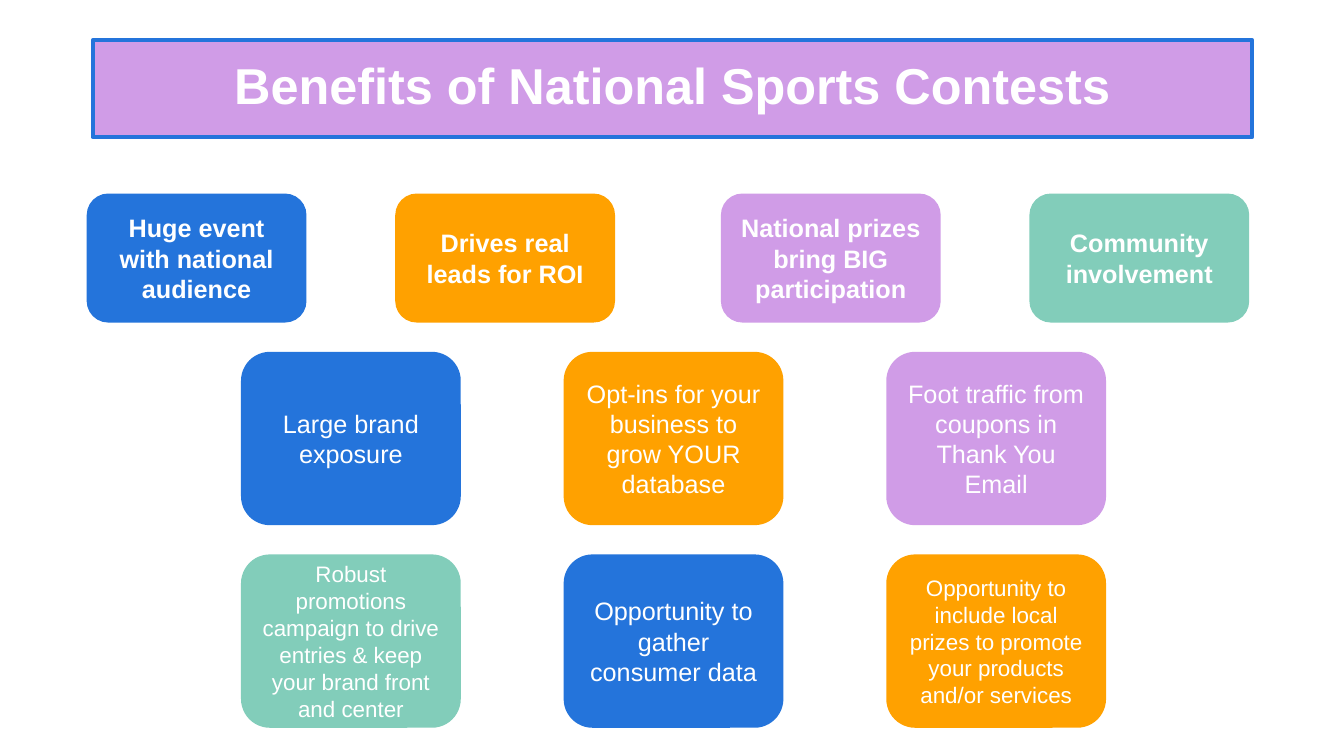
from pptx import Presentation
from pptx.dml.color import RGBColor
from pptx.enum.shapes import MSO_SHAPE as Shape
from pptx.enum.text import MSO_ANCHOR as Anchor, PP_ALIGN as Align
from pptx.util import Inches, Pt

BLUE = RGBColor(0x24, 0x74, 0xDB)
ORANGE = RGBColor(0xFF, 0xA1, 0x00)
LILAC = RGBColor(0xD0, 0x9C, 0xE7)
MINT = RGBColor(0x82, 0xCD, 0xBA)
WHITE = RGBColor(0xFF, 0xFF, 0xFF)

TITLE = "Benefits of National Sports Contests"
HEADLINES = [
    ("Huge event with national audience", BLUE),
    ("Drives real leads for ROI", ORANGE),
    ("National prizes bring BIG participation", LILAC),
    ("Community involvement", MINT),
]
DETAILS = [
    [
        ("Large brand exposure", BLUE, 18),
        ("Opt-ins for your business to grow YOUR database", ORANGE, 18),
        ("Foot traffic from coupons in Thank You Email", LILAC, 18),
    ],
    [
        ("Robust promotions campaign to drive entries & keep your brand front and center", MINT, 16),
        ("Opportunity to gather consumer data", BLUE, 18),
        ("Opportunity to include local prizes to promote your products and/or services", ORANGE, 16),
    ],
]

CARD_WIDTH = 2.18
HEADLINE_LEFT, HEADLINE_TOP, HEADLINE_HEIGHT = 0.86, 1.92, 1.28
HEADLINE_STEP, PAIR_STEP = 3.06, 6.29
DETAIL_LEFT, DETAIL_TOP, DETAIL_HEIGHT = 2.39, 3.49, 1.72
DETAIL_COLUMN, DETAIL_ROW = 3.2, 2.01


def add_card(slide, kind, box, text, color, size, bold=False):
    """Add a filled shape with centred white text."""
    card = slide.shapes.add_shape(kind, *map(Inches, box))
    card.shadow.inherit = False
    card.fill.solid()
    card.fill.fore_color.rgb = color
    card.line.fill.background()
    frame = card.text_frame
    frame.text = text
    frame.word_wrap = True
    frame.vertical_anchor = Anchor.MIDDLE
    paragraph = frame.paragraphs[0]
    paragraph.alignment = Align.CENTER
    font = paragraph.runs[0].font
    font.name, font.size, font.bold = "Arial", Pt(size), bold
    font.color.rgb = WHITE
    return card


def main():
    """Build the slide and save it."""
    deck = Presentation()
    deck.slide_width, deck.slide_height = Inches(13.33), Inches(7.5)
    slide = deck.slides.add_slide(deck.slide_layouts[6])

    banner = add_card(slide, Shape.RECTANGLE, (0.92, 0.4, 11.5, 0.96), TITLE, LILAC, 36, True)
    banner.line.color.rgb = BLUE
    banner.line.width = Pt(3)
    banner.text_frame.paragraphs[0].line_spacing = 0.9

    for index, (text, color) in enumerate(HEADLINES):
        pair, side = divmod(index, 2)
        left = HEADLINE_LEFT + pair * PAIR_STEP + side * HEADLINE_STEP
        box = (left, HEADLINE_TOP, CARD_WIDTH, HEADLINE_HEIGHT)
        add_card(slide, Shape.ROUNDED_RECTANGLE, box, text, color, 18, True)

    for row, details in enumerate(DETAILS):
        for column, (text, color, size) in enumerate(details):
            left = DETAIL_LEFT + column * DETAIL_COLUMN
            top = DETAIL_TOP + row * DETAIL_ROW
            box = (left, top, CARD_WIDTH, DETAIL_HEIGHT)
            add_card(slide, Shape.ROUNDED_RECTANGLE, box, text, color, size)

    deck.save("out.pptx")


if __name__ == "__main__":
    main()
